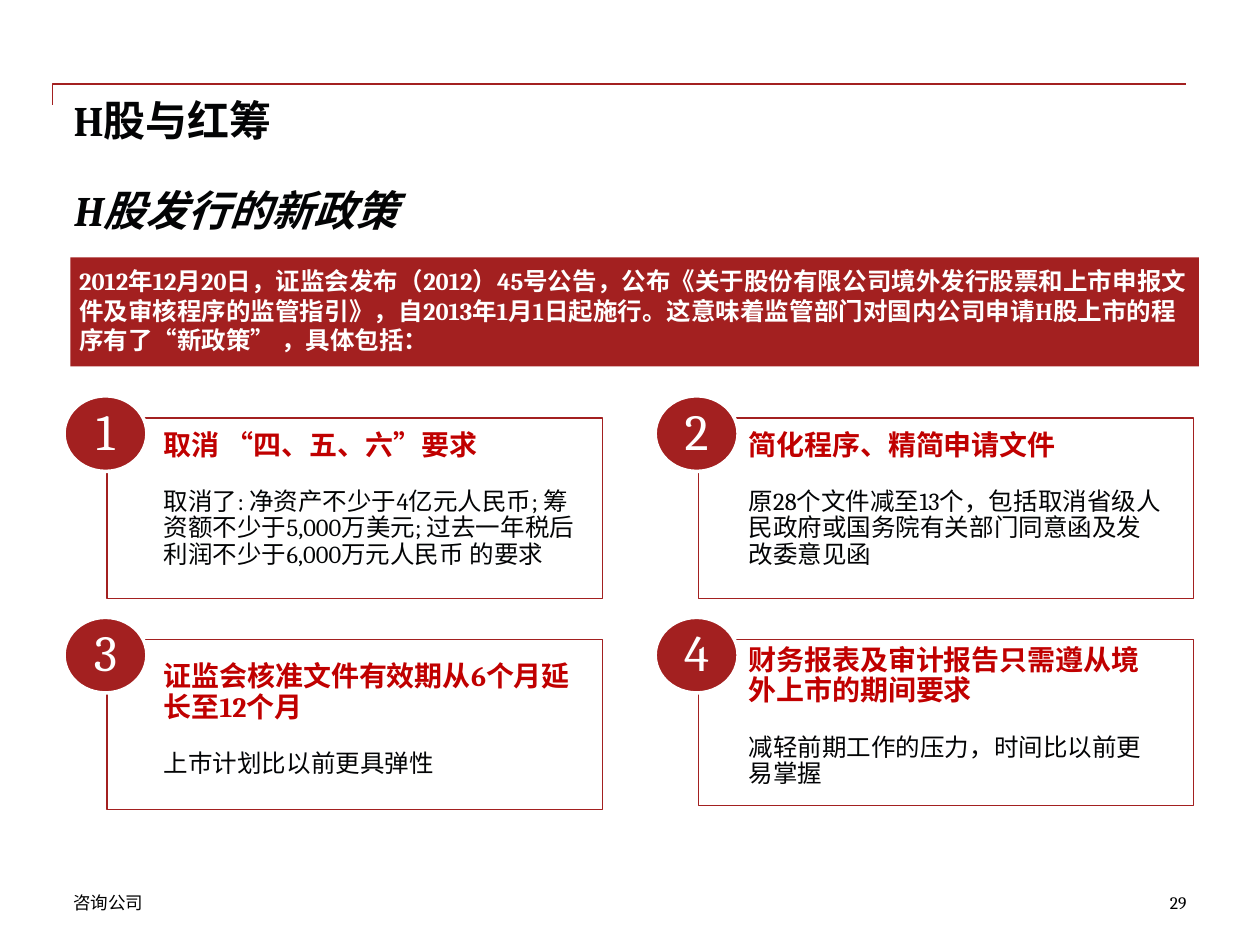
from lxml import etree
from pptx import Presentation
from pptx import util as u
from pptx.dml.color import RGBColor
from pptx.enum import shapes, text
from pptx.oxml.ns import qn

COLS, ROWS = 120, 90
RED, HEADING, INK, BLACK, WHITE = "A32020", "C00000", "030405", "000000", "FFFFFF"

CARDS = [
    ("取消 “四、五、六”要求",
     "取消了: 净资产不少于4亿元人民币; 筹资额不少于5,000万美元; 过去一年税后利润不少于6,000万元人民币 的要求",
     17.2, 41),
    ("简化程序、精简申请文件",
     "原28个文件减至13个，包括取消省级人民政府或国务院有关部门同意函及发改委意见函",
     17.2, 41),
    ("证监会核准文件有效期从6个月延长至12个月",
     "上巿计划比以前更具弹性",
     16.2, 62),
    ("财务报表及审计报告只需遵从境外上市的期间要求",
     "减轻前期工作的压力，时间比以前更易掌握",
     15.8, 61.7),
]


def color(value):
    return RGBColor.from_string(value)


def write(tf, words, size=14, fill=BLACK, bold=False, italic=False, align="LEFT",
          spacing=None, after=0, first=True, latin="Cambria", asian="Noto Sans CJK SC"):
    p = tf.paragraphs[0] if first else tf.add_paragraph()
    p.alignment = getattr(text.PP_ALIGN, align)
    p.space_after = u.Pt(after)
    if spacing:
        p.line_spacing = spacing
    r = p.add_run()
    r.text = words
    r.font.size, r.font.bold, r.font.italic = u.Pt(size), bold, italic
    r.font.name = latin
    r.font.color.rgb = color(fill)
    ea = etree.SubElement(r.font._element, qn("a:ea"))
    ea.set("typeface", asian)


class Deck:
    def __init__(self):
        self.prs = Presentation()
        self.prs.slide_width, self.prs.slide_height = u.Inches(10), u.Inches(7.5)
        self.s = self.prs.slides.add_slide(self.prs.slide_layouts[6])

    def x(self, cols):
        return int(self.prs.slide_width * cols / COLS)

    def y(self, rows):
        return int(self.prs.slide_height * rows / ROWS)

    def place(self, left, top, width, height):
        return self.x(left), self.y(top), self.x(width), self.y(height)

    def frame(self, sp, anchor="TOP", inset=(0, 0, 0, 0)):
        tf = sp.text_frame
        tf.word_wrap = True
        tf.vertical_anchor = getattr(text.MSO_ANCHOR, anchor)
        tf.margin_left, tf.margin_top, tf.margin_right, tf.margin_bottom = map(u.Inches, inset)
        return tf

    def style(self, sp, fill=None, line=None, width=1):
        sp.shadow.inherit = False
        if fill:
            sp.fill.solid()
            sp.fill.fore_color.rgb = color(fill)
        else:
            sp.fill.background()
        if line:
            sp.line.color.rgb = color(line)
            sp.line.width = u.Pt(width)
        else:
            sp.line.fill.background()

    def box(self, *at, **kw):
        return self.frame(self.s.shapes.add_textbox(*self.place(*at)), **kw)

    def shape(self, kind, *at, **kw):
        sp = self.s.shapes.add_shape(getattr(shapes.MSO_SHAPE, kind), *self.place(*at))
        self.style(sp, **kw)
        return sp

    def rule(self, *points):
        spots = [(self.x(a), self.y(b)) for a, b in points]
        path_builder = self.s.shapes.build_freeform(*spots[0])
        path_builder.add_line_segments(spots[1:], close=False)
        self.style(path_builder.convert_to_shape(), line=RED)

    def banner(self, words, *at):
        sp = self.shape("RECTANGLE", *at, fill=RED)
        write(self.frame(sp, inset=(0.07,) * 4), words, fill=WHITE, bold=True)

    def card(self, i, heading, body, height, text_top):
        row, col = divmod(i, 2)
        left, top = 56.3 * col, 21.1 * row
        self.shape("RECTANGLE", 10.2 + left, 39.8 + top, 47.2, height, line=RED, width=0.75)
        tf = self.box(15.6 + 55.7 * col, text_top, 40.7, 13.2,
                      anchor="MIDDLE", inset=(0, 0.09, 0.09, 0.09))
        write(tf, heading, size=16, fill=HEADING, bold=True, spacing=0.9, after=16)
        write(tf, body, fill=INK, spacing=0.9, first=False)
        badge = self.shape("OVAL", 6.1 + left, 37.7 + top, 7.9, 7.2,
                           fill=RED, line=WHITE, width=2)
        write(self.frame(badge, anchor="MIDDLE"), str(i + 1), size=29, fill=WHITE,
              align="CENTER", spacing=0.9)


def main():
    deck = Deck()
    deck.rule((5, 10), (5, 8), (113, 8))
    write(deck.box(7, 9, 106, 12), "H股与红筹", size=24, fill=INK, bold=True)
    write(deck.box(7.1, 17.6, 85.1, 5.6), "H股发行的新政策",
          size=24, fill=INK, bold=True, italic=True)
    deck.banner("2012年12月20日，证监会发布（2012）45号公告，公布《关于股份有限公司境外发行股票和上市"
                "申报文件及审核程序的监管指引》，自2013年1月1日起施行。这意味着监管部门对国内公司申请H"
                "股上市的程序有了“新政策” ，具体包括：", 6.7, 24.5, 107.5, 10.4)
    for i, card in enumerate(CARDS):
        deck.card(i, *card)
    write(deck.box(7, 85, 34, 2), "咨询公司", size=10, latin="Noto Sans CJK SC")
    write(deck.box(93, 85, 20, 2), "29", size=10, align="RIGHT")
    deck.prs.save("out.pptx")


if __name__ == "__main__":
    main()
